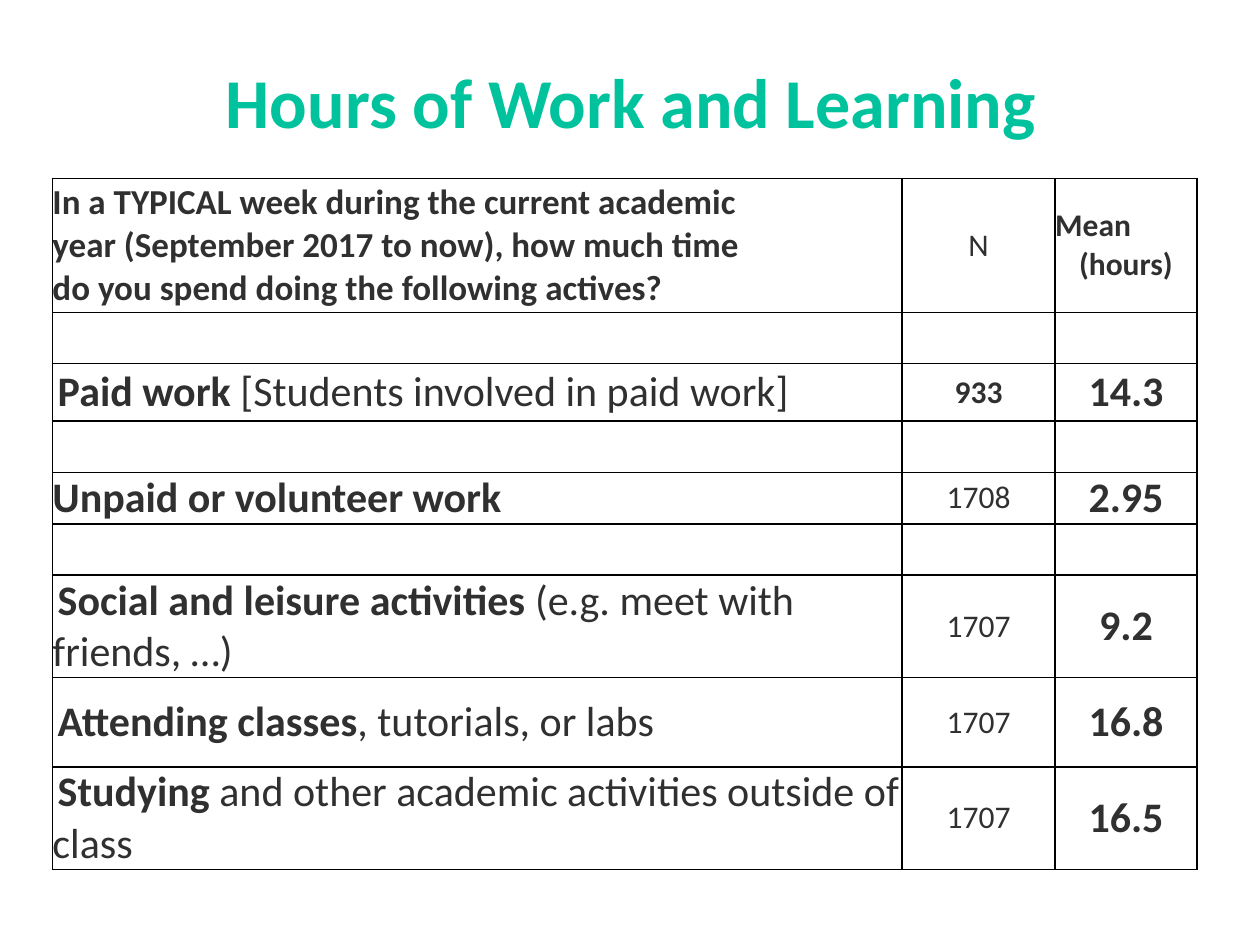
import pptx
import pptx.util
import pptx.dml.color
import pptx.enum.text
import lxml.etree

Pt = pptx.util.Pt
PP_ALIGN = pptx.enum.text.PP_ALIGN
MIDDLE = pptx.enum.text.MSO_ANCHOR.MIDDLE
A = "http://schemas.openxmlformats.org/drawingml/2006/main"


def color(value):
    return pptx.dml.color.RGBColor.from_string(value)


def add_run(p, text, size, bold, fill="303030"):
    r = p.add_run()
    r.text = text
    for name, value in {"name": "Calibri", "size": Pt(size), "bold": bold}.items():
        setattr(r.font, name, value)
    r.font.color.rgb = color(fill)


prs = pptx.Presentation()
prs.slide_width, prs.slide_height = Pt(720), Pt(540)
s = prs.slides.add_slide(prs.slide_layouts[6])

question = [
    "In a TYPICAL week during the current academic ",
    "year (September 2017 to now), how much time ",
    "do you spend doing the following actives?",
]
activities = {
    2: ("Paid work ", "[Students involved in paid work]", "933", "14.3"),
    4: ("Unpaid or volunteer work", "", "1708", "2.95"),
    6: ("Social and leisure activities", " (e.g. meet with friends, …)", "1707", "9.2"),
    7: ("Attending classes", ", tutorials, or labs", "1707", "16.8"),
    8: ("Studying", " and other academic activities outside of class", "1707", "16.5"),
}
widths = [485.5, 87.5, 81]
heights = [76.5, 29.25, 33, 29.25, 29.5, 29.25, 58.6, 51, 58.6]

frame = s.shapes.add_table(len(heights), len(widths), Pt(30), Pt(102), Pt(sum(widths)), Pt(sum(heights)))
table = frame.table
table.first_row = table.horz_banding = False
for column, width in zip(table.columns, widths):
    column.width = Pt(width)
for row, height in zip(table.rows, heights):
    row.height = Pt(height)

for cell in table.iter_cells():
    cell.fill.background()
    tcPr = cell._tc.get_or_add_tcPr()
    for i, side in enumerate(["lnL", "lnR", "lnT", "lnB"]):
        ln = lxml.etree.Element(f"{{{A}}}{side}", w=str(Pt(1)))
        fill = lxml.etree.SubElement(ln, f"{{{A}}}solidFill")
        lxml.etree.SubElement(fill, f"{{{A}}}srgbClr", val="000000")
        tcPr.insert(i, ln)

for i in [0, *activities]:
    for cell in table.rows[i].cells:
        cell.vertical_anchor = MIDDLE
        for side in ["left", "right", "top", "bottom"]:
            setattr(cell, f"margin_{side}", 0)
        cell.text_frame.paragraphs[0].alignment = PP_ALIGN.CENTER
    table.cell(i, 0).text_frame.paragraphs[0].alignment = PP_ALIGN.LEFT

p = table.cell(0, 0).text_frame.paragraphs[0]
for i, line in enumerate(question):
    if i:
        p.add_line_break()
    add_run(p, line, 20, True)
add_run(table.cell(0, 1).text_frame.paragraphs[0], "N", 18, False)
tf = table.cell(0, 2).text_frame
p = tf.paragraphs[0]
p.alignment = PP_ALIGN.LEFT
add_run(p, "Mean", 18, True)
p = tf.add_paragraph()
p.alignment = PP_ALIGN.CENTER
add_run(p, "(hours)", 18, True)

for i, (activity, detail, count, mean) in activities.items():
    label, n, hours = [cell.text_frame.paragraphs[0] for cell in table.rows[i].cells]
    add_run(label, activity, 24, True)
    if detail:
        add_run(label, detail, 24, False)
        label._p.get_or_add_pPr().set("indent", str(Pt(3)))
    add_run(n, count, 18, i == 2)
    add_run(hours, mean, 24, True)

sp = s.shapes.add_textbox(Pt(70), Pt(30), Pt(581), Pt(56))
tf = sp.text_frame
tf.word_wrap = True
for side in ["left", "right", "top", "bottom"]:
    setattr(tf, f"margin_{side}", Pt(3.6))
p = tf.paragraphs[0]
p.alignment = PP_ALIGN.CENTER
add_run(p, "Hours of Work and Learning", 40, True, "00C29D")

prs.save("out.pptx")
